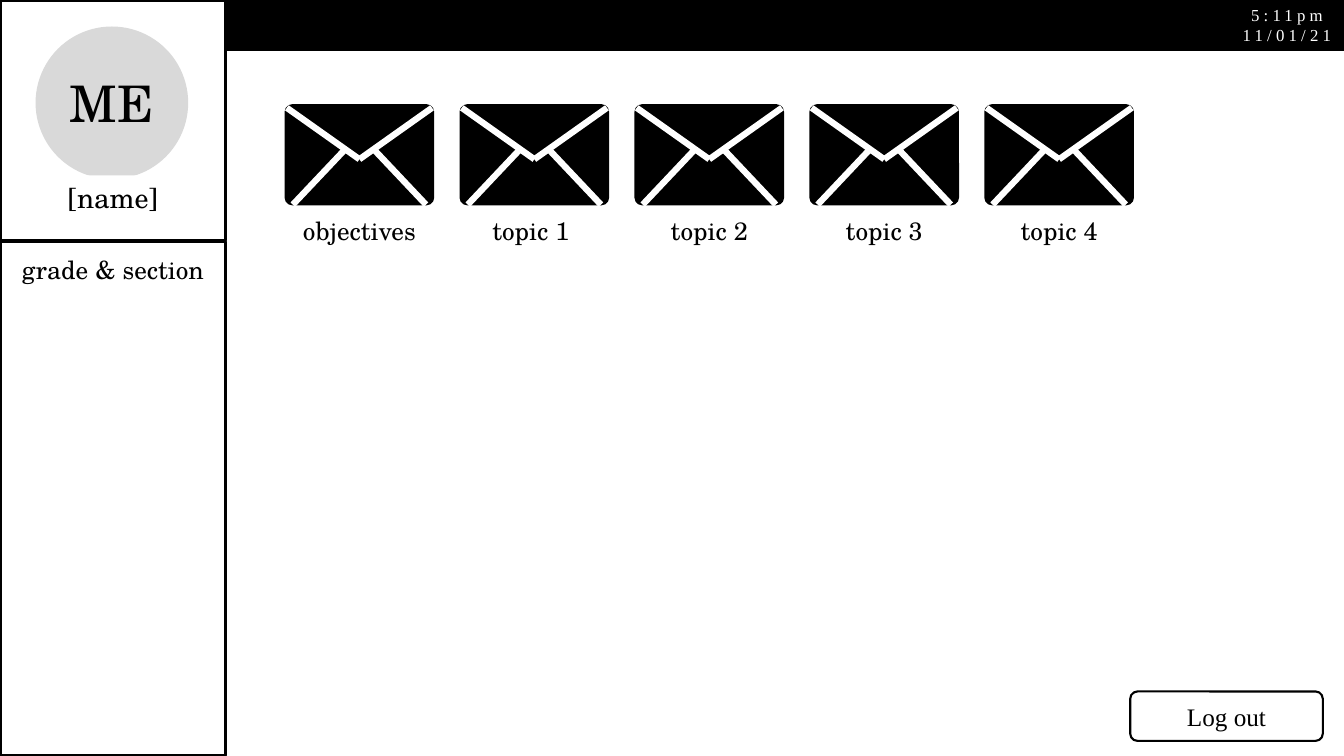
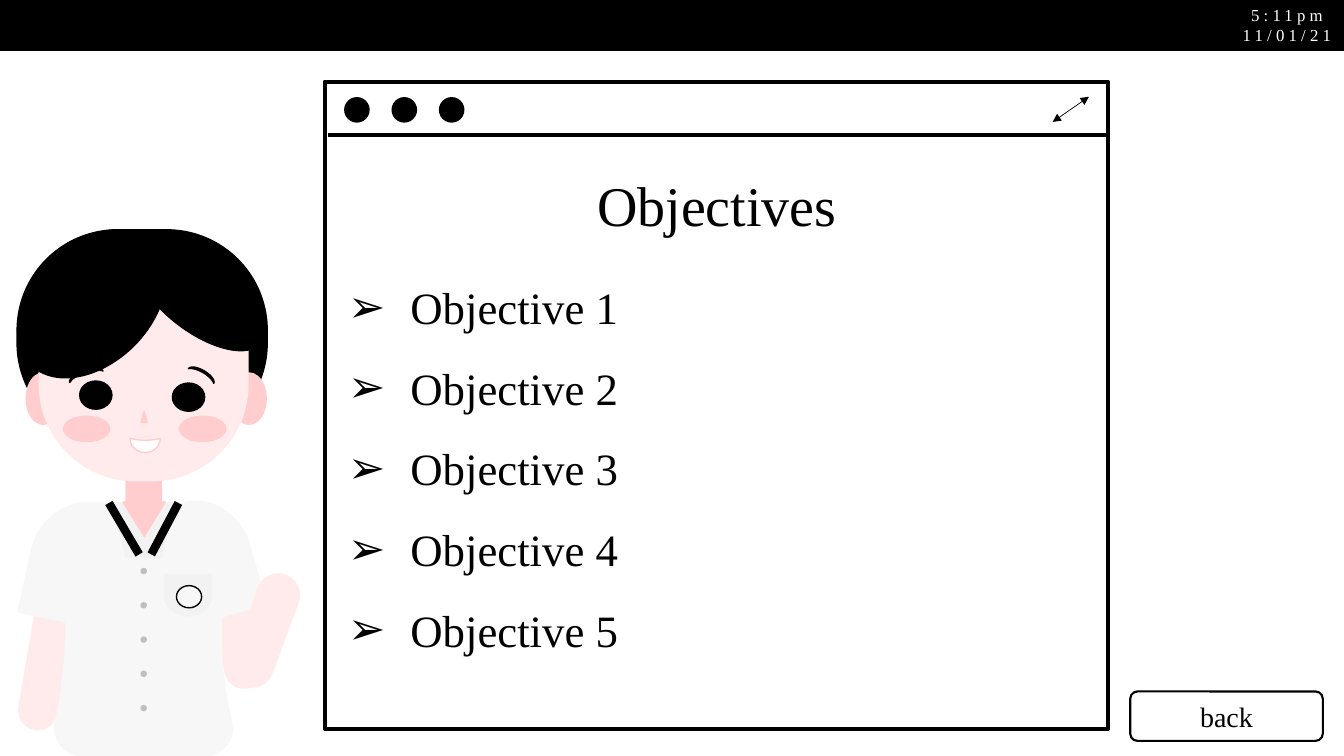
from dataclasses import dataclass
from typing import NamedTuple, Optional, Union

from pptx import Presentation
from pptx.dml.color import RGBColor
from pptx.enum.shapes import MSO_CONNECTOR, MSO_SHAPE
from pptx.enum.text import MSO_ANCHOR, MSO_AUTO_SIZE, PP_ALIGN
from pptx.oxml.ns import qn
from pptx.shapes.autoshape import Shape
from pptx.shapes.connector import Connector
from pptx.shapes.shapetree import GroupShapes, SlideShapes
from pptx.slide import Slide
from pptx.text.text import TextFrame
from pptx.util import Inches, Pt
from lxml.etree import SubElement

Shapes = Union[SlideShapes, GroupShapes]
Point = tuple[float, float]

BLACK = RGBColor(0x00, 0x00, 0x00)
WHITE = RGBColor(0xFF, 0xFF, 0xFF)
AVATAR_GREY = RGBColor(0xD9, 0xD9, 0xD9)
BUTTON_GREY = RGBColor(0xBF, 0xBF, 0xBF)
SHIRT = RGBColor(0xF7, 0xF7, 0xF7)
SHIRT_SHADE = RGBColor(0xF2, 0xF2, 0xF2)
SKIN = RGBColor(0xFF, 0xEB, 0xEB)
BLUSH = RGBColor(0xFF, 0xCD, 0xCD)

SCHOLA = "TeX Gyre Schola"
TIMES = "Times New Roman"
SLIDE_WIDTH, SLIDE_HEIGHT = 13.33, 7.5
BAR_HEIGHT = 0.5
SIDEBAR_WIDTH = 2.24

RECT = MSO_SHAPE.RECTANGLE
ROUND = MSO_SHAPE.ROUNDED_RECTANGLE
OVAL = MSO_SHAPE.OVAL
DELAY = MSO_SHAPE.FLOWCHART_DELAY
TRIANGLE = MSO_SHAPE.ISOSCELES_TRIANGLE
MOON = MSO_SHAPE.MOON


class Box(NamedTuple):
    left: float
    top: float
    width: float
    height: float


@dataclass(frozen=True)
class Part:
    kind: MSO_SHAPE
    box: Box
    fill: Optional[RGBColor]
    line: Optional[RGBColor] = None
    weight: float = 1
    rotation: float = 0
    adjustment: Optional[float] = None


@dataclass(frozen=True)
class TextStyle:
    font: str
    size: float
    color: RGBColor = BLACK


def tinted(kind: MSO_SHAPE, box: Box, color: RGBColor, rotation: float = 0,
           adjustment: Optional[float] = None) -> Part:
    """A part whose outline has the colour of its fill."""
    return Part(kind, box, color, color, 1, rotation, adjustment)


# Student figure, from back to front
BEHIND_TORSO = [
    tinted(ROUND, Box(0.17, 2.28, 2.48, 2.12), BLACK, 0, 0.47),
    *(tinted(OVAL, Box(x, 3.7, 0.34, 0.51), BLUSH) for x in (0.26, 2.3)),
    tinted(ROUND, Box(0.33, 5.16, 0.38, 2.09), SKIN, 9.7, 0.5),
    tinted(DELAY, Box(0.26, 5.02, 1.22, 1.15), SHIRT, 282.2),
    tinted(ROUND, Box(2.1, 5.12, 0.38, 1.72), SKIN, 348.7, 0.5),
    tinted(DELAY, Box(1.38, 5.04, 1.19, 1.05), SHIRT, 254.4),
    tinted(ROUND, Box(1.25, 4.59, 0.35, 0.45), BLUSH),
    tinted(ROUND, Box(0.39, 2.5, 2.07, 2.27), SKIN, 0, 0.463),
]
NECKLINE = tinted(TRIANGLE, Box(1.22, 4.98, 0.42, 0.34), BLUSH, 180)
SHIRT_FRONT = [
    *(tinted(OVAL, Box(1.4, 5.64 + 0.34 * row, 0.05, 0.05), BUTTON_GREY)
      for row in range(5)),
    tinted(DELAY, Box(1.66, 5.67, 0.41, 0.47), SHIRT_SHADE, 90),
    Part(OVAL, Box(1.75, 5.81, 0.25, 0.22), SHIRT, BLACK),
]
FACE = [
    # Fringe and nose
    tinted(OVAL, Box(0.32, 2.16, 1.18, 1.71), BLACK, 45.2),
    tinted(OVAL, Box(1.62, 2.16, 0.72, 1.54), BLACK, 307.5),
    tinted(TRIANGLE, Box(1.4, 4.08, 0.06, 0.11), BLUSH),
    # Cheeks and eyebrows
    *(tinted(OVAL, Box(x, 4.13, 0.46, 0.25), BLUSH) for x in (0.63, 1.78)),
    tinted(MOON, Box(0.81, 3.53, 0.07, 0.35), BLACK, 70.8, 0.343),
    tinted(MOON, Box(1.98, 3.56, 0.06, 0.29), BLACK, 120.4, 0.343),
    # Eyes
    tinted(OVAL, Box(0.79, 3.78, 0.32, 0.28), BLACK),
    tinted(OVAL, Box(1.71, 3.8, 0.32, 0.28), BLACK),
    # Mouth
    Part(OVAL, Box(1.37, 4.37, 0.14, 0.12), WHITE, BLUSH),
    Part(MOON, Box(1.37, 4.27, 0.14, 0.3), WHITE, BLUSH, 1, 270, 0.875),
]
RAISED_HAND = tinted(ROUND, Box(2.42, 5.67, 0.42, 1.17), SKIN, 20.3, 0.5)

# Torso sides as cubic curves: start, two controls, end
TORSO_CURVES = [
    ((0.54, 5.28), (0.54, 5.12), (0.67, 4.99), (0.84, 4.99)),
    ((2.02, 4.99), (2.18, 4.99), (2.31, 5.12), (2.31, 5.28)),
    ((2.31, 5.28), (2.17, 5.92), (2.14, 6.58), (2.31, 7.21)),
    ((2.31, 7.21), (2.31, 7.37), (2.18, 7.5), (2.02, 7.5)),
    ((0.84, 7.5), (0.67, 7.5), (0.54, 7.37), (0.54, 7.21)),
    ((0.54, 7.21), (0.66, 6.69), (0.72, 5.98), (0.54, 5.28)),
]
COLLAR = [(1.11, 4.99), (1.73, 4.99), (1.6, 5.53), (1.25, 5.53)]


def paint(shape: Shape, fill: Optional[RGBColor], line: Optional[RGBColor],
          weight: float = 1) -> None:
    shape.shadow.inherit = False
    for target, color in ((shape.fill, fill), (shape.line.fill, line)):
        if color is None:
            target.background()
        else:
            target.solid()
            target.fore_color.rgb = color
    if line is not None:
        shape.line.width = Pt(weight)


def draw(shapes: Shapes, part: Part) -> Shape:
    shape = shapes.add_shape(part.kind, *map(Inches, part.box))
    paint(shape, part.fill, part.line, part.weight)
    shape.rotation = part.rotation
    if part.adjustment is not None:
        shape.adjustments[0] = part.adjustment
    return shape


def draw_line(shapes: Shapes, start: Point, end: Point, color: RGBColor,
              weight: float) -> Connector:
    line = shapes.add_connector(MSO_CONNECTOR.STRAIGHT, *map(Inches, start + end))
    line.line.color.rgb = color
    line.line.width = Pt(weight)
    SubElement(line.element.spPr, qn("a:effectLst"))
    return line


def draw_outline(shapes: Shapes, points: list[Point], color: RGBColor) -> None:
    corners = [(Inches(x), Inches(y)) for x, y in points]
    builder = shapes.build_freeform(*corners[0])
    builder.add_line_segments(corners[1:], close=True)
    paint(builder.convert_to_shape(), color, color)


def curve_points(curve: tuple[Point, Point, Point, Point],
                 steps: int = 12) -> list[Point]:
    points = []
    for step in range(steps + 1):
        t = step / steps
        weights = ((1 - t) ** 3, 3 * t * (1 - t) ** 2, 3 * t * t * (1 - t), t ** 3)
        points.append((sum(w * p[0] for w, p in zip(weights, curve)),
                       sum(w * p[1] for w, p in zip(weights, curve))))
    return points


def write(frame: TextFrame, lines: list[str], style: TextStyle,
          align: PP_ALIGN = PP_ALIGN.CENTER, wrap: bool = True) -> None:
    frame_format = {"word_wrap": wrap, "auto_size": MSO_AUTO_SIZE.NONE,
                    "vertical_anchor": MSO_ANCHOR.MIDDLE}
    font_format = {"name": style.font, "size": Pt(style.size)}
    for name, value in frame_format.items():
        setattr(frame, name, value)
    for index, line in enumerate(lines):
        paragraph = frame.paragraphs[0] if index == 0 else frame.add_paragraph()
        paragraph.alignment = align
        run = paragraph.add_run()
        run.text = line
        for name, value in font_format.items():
            setattr(run.font, name, value)
        run.font.color.rgb = style.color


def draw_label(shapes: Shapes, part: Part, text: str, style: TextStyle) -> None:
    write(draw(shapes, part).text_frame, [text], style)


def place(shape: Shape, box: Box) -> None:
    for name, value in box._asdict().items():
        setattr(shape, name, Inches(value))


def draw_status_bar(slide: Slide, left: float) -> None:
    bar = Box(left, 0, SLIDE_WIDTH - left, BAR_HEIGHT)
    draw(slide.shapes, tinted(RECT, bar, BLACK))
    clock = slide.shapes.add_textbox(*map(Inches, Box(12.2, 0, 1.13, BAR_HEIGHT)))
    write(clock.text_frame, ["5:11pm", "11/01/21"], TextStyle(TIMES, 12, WHITE),
          wrap=False)
    for paragraph in clock.text_frame.paragraphs:
        paragraph.runs[0].font._element.set("spc", "300")


def draw_button(slide: Slide, text: str, size: float) -> None:
    button = Part(ROUND, Box(11.21, 6.86, 1.91, 0.49), WHITE, BLACK, 1.5,
                  adjustment=0.146)
    draw_label(slide.shapes, button, text, TextStyle(TIMES, size))


def draw_envelope(slide: Slide, left: float, caption: str) -> None:
    top, width, height = 1.04, 1.47, 0.99
    shapes = slide.shapes.add_group_shape().shapes
    draw(shapes, tinted(ROUND, Box(left, top, width, height), BLACK, 0, 0.07))
    tip = (left + width / 2, top + 0.54)
    for side in (-1, 1):
        flap_corner = (tip[0] + side * 0.72, top + 0.03)
        fold_top = (tip[0] + side * 0.15, top + 0.45)
        fold_bottom = (tip[0] + side * 0.66, top + height)
        draw_line(shapes, flap_corner, tip, WHITE, 4.5)
        draw_line(shapes, fold_top, fold_bottom, WHITE, 4.5)
    draw_label(slide.shapes, Part(RECT, Box(left, 2.08, width, 0.42), WHITE),
               caption, TextStyle(SCHOLA, 18))


def draw_student(slide: Slide) -> None:
    shapes = slide.shapes.add_group_shape().shapes
    for part in BEHIND_TORSO:
        draw(shapes, part)
    torso = [point for curve in TORSO_CURVES for point in curve_points(curve)]
    draw_outline(shapes, torso, SHIRT)
    draw_outline(shapes, COLLAR, SHIRT_SHADE)
    draw(shapes, NECKLINE)
    draw_line(shapes, (1.08, 4.99), (1.38, 5.5), BLACK, 6)
    draw_line(shapes, (1.5, 5.5), (1.77, 4.99), BLACK, 6)
    for part in [*SHIRT_FRONT, *FACE, RAISED_HAND]:
        draw(shapes, part)


def draw_window(slide: Slide) -> None:
    shapes = slide.shapes
    draw(shapes, Part(RECT, Box(3.22, 0.81, 7.77, 6.42), WHITE, BLACK, 3))
    draw_line(shapes, (3.25, 1.34), (10.99, 1.34), BLACK, 3)
    for column in range(3):
        draw(shapes, tinted(OVAL, Box(3.42 + 0.47 * column, 0.97, 0.24, 0.24), BLACK))
    resize = draw_line(shapes, (10.8, 0.96), (10.44, 1.21), BLACK, 0.5)
    outline = resize.element.spPr.find(qn("a:ln"))
    for end in ("a:headEnd", "a:tailEnd"):
        SubElement(outline, qn(end), type="triangle")


def build_desktop(slide: Slide) -> None:
    shapes = slide.shapes
    # Profile sidebar
    draw_label(shapes, tinted(OVAL, Box(0.36, 0.27, 1.5, 1.5), AVATAR_GREY),
               "ME", TextStyle(SCHOLA, 36))
    draw_label(shapes, Part(RECT, Box(0, 1.74, SIDEBAR_WIDTH, 0.44), WHITE),
               "[name]", TextStyle(SCHOLA, 20))
    for top, height in ((0, 2.39), (2.4, 5.1)):
        draw(shapes, Part(RECT, Box(0, top, SIDEBAR_WIDTH, height), None, BLACK, 2.25))
    draw_label(shapes, Part(RECT, Box(0.11, 2.45, 2.02, 0.45), None),
               "grade & section", TextStyle(SCHOLA, 18))
    draw_status_bar(slide, SIDEBAR_WIDTH)
    # Envelopes in equal steps
    captions = ["objectives", "topic 1 ", "topic 2", "topic 3", "topic 4"]
    first, last = 2.83, 9.77
    step = (last - first) / (len(captions) - 1)
    for column, caption in enumerate(captions):
        draw_envelope(slide, first + step * column, caption)
    draw_button(slide, "Log out", 18)


def build_objectives(slide: Slide) -> None:
    draw_status_bar(slide, 0)
    draw_window(slide)
    # Title and list stand in front of the window
    heading, objectives = slide.shapes.title, slide.placeholders[1]
    for placeholder, box in ((heading, Box(3.74, 1.51, 6.74, 1.02)),
                             (objectives, Box(3.35, 2.36, 7.53, 4.3))):
        place(placeholder, box)
        slide.shapes.element.append(placeholder.element)
    write(heading.text_frame, ["Objectives"], TextStyle(TIMES, 40))
    write(objectives.text_frame, [f"Objective {number}" for number in range(1, 6)],
          TextStyle(TIMES, 32), PP_ALIGN.LEFT)
    indent = Inches(0.62)
    for paragraph in objectives.text_frame.paragraphs:
        for name, value in {"line_spacing": 1.5, "space_before": Pt(0)}.items():
            setattr(paragraph, name, value)
        properties = paragraph._p.get_or_add_pPr()
        properties.set("marL", str(indent))
        properties.set("indent", str(-indent))
        SubElement(properties, qn("a:buChar"), char="➢")
    draw_button(slide, "back", 20)
    draw_student(slide)


def main() -> None:
    deck = Presentation()
    deck.slide_width, deck.slide_height = Inches(SLIDE_WIDTH), Inches(SLIDE_HEIGHT)
    build_desktop(deck.slides.add_slide(deck.slide_layouts[6]))
    build_objectives(deck.slides.add_slide(deck.slide_layouts[1]))
    deck.save("out.pptx")


if __name__ == "__main__":
    main()
